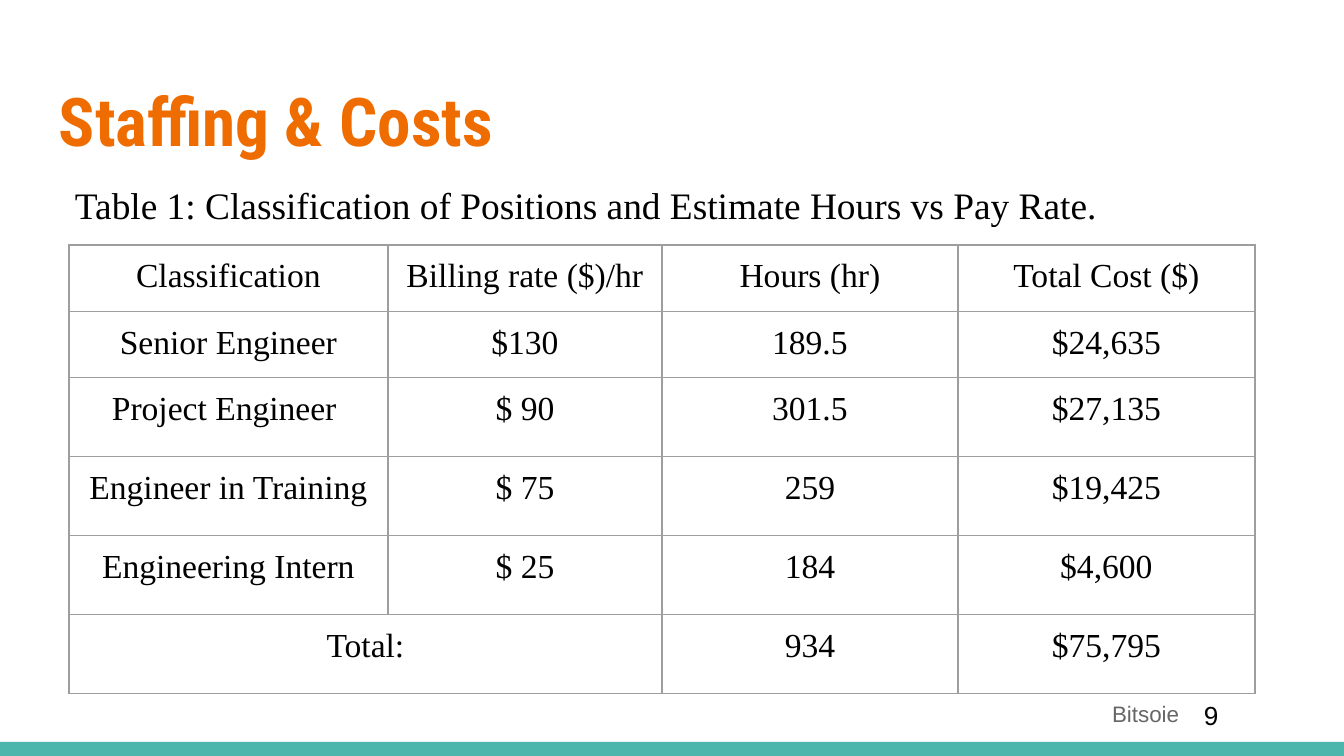
"""Build the staffing and costs slide."""
import pptx
import pptx.dml.color
import pptx.enum.shapes
import pptx.enum.text
import pptx.oxml
import pptx.oxml.ns
import pptx.util

RGB = pptx.dml.color.RGBColor
ALIGN = pptx.enum.text.PP_ALIGN
ANCHOR = pptx.enum.text.MSO_ANCHOR
TEAL = RGB(0x4D, 0xB6, 0xAC)
ORANGE = RGB(0xEF, 0x6C, 0x00)
BLACK = RGB(0x00, 0x00, 0x00)
GRAY = RGB(0x66, 0x66, 0x66)
RULE = RGB(0x9E, 0x9E, 0x9E)
SCALE = 914400 / 134.4
INSET = 13
SERIF = "Times New Roman"

TITLE = {"name": "Roboto Condensed", "size": 36, "bold": True, "color": ORANGE}
NOTE = {"name": SERIF, "size": 20, "color": BLACK}
BODY = {"name": SERIF, "size": 18, "color": BLACK}
PAGE = {"name": "Arial", "size": 14, "color": BLACK}
TEAM = {"name": "Arial", "size": 12, "color": GRAY}

COLS = [319, 274, 296, 297]
HIGH = [51, 51, 79, 79, 79, 79]
ROWS = [
    ["Classification", "Billing rate ($)/hr", "Hours (hr)", "Total Cost ($)"],
    ["Senior Engineer", "$130", "189.5", "$24,635"],
    ["Project Engineer ", "$ 90", "301.5", "$27,135"],
    ["Engineer in Training", "$ 75", "259", "$19,425"],
    ["Engineering Intern", "$ 25", "184", "$4,600"],
    ["Total:", "", "934", "$75,795"],
]


def px(num):
    """Turn pixels into EMU."""
    return pptx.util.Emu(round(num * SCALE))


def style(font, form):
    """Set font attributes from a dict of format values."""
    for key, val in form.items():
        if key == "color":
            font.color.rgb = val
        else:
            setattr(font, key, pptx.util.Pt(val) if key == "size" else val)


def pad(item):
    """Give a text frame or a cell equal margins."""
    for side in ("left", "top", "right", "bottom"):
        setattr(item, "margin_" + side, px(INSET))


def write(para, text, form):
    """Add one formatted run to a paragraph."""
    run = para.add_run()
    run.text = text
    style(run.font, form)


def label(slide, area, text, form, anchor=ANCHOR.TOP):
    """Add a text box."""
    frame = slide.shapes.add_textbox(*map(px, area)).text_frame
    frame.word_wrap = True
    frame.vertical_anchor = anchor
    pad(frame)
    write(frame.paragraphs[0], text, form)


def bar(slide, area, color):
    """Add a plain filled rectangle."""
    kind = pptx.enum.shapes.MSO_SHAPE.RECTANGLE
    shape = slide.shapes.add_shape(kind, *map(px, area))
    shape.shadow.inherit = False
    shape.fill.solid()
    shape.fill.fore_color.rgb = color
    shape.line.fill.background()


def border(cell):
    """Draw thin lines on all four sides of a cell."""
    props = cell._tc.get_or_add_tcPr()
    space = pptx.oxml.ns.nsdecls("a")
    width = pptx.util.Pt(0.75)
    for spot, side in enumerate("LRTB"):
        line = pptx.oxml.parse_xml(
            f'<a:ln{side} {space} w="{width}"><a:solidFill>'
            f'<a:srgbClr val="{RULE}"/></a:solidFill></a:ln{side}>')
        props.insert(spot, line)


def grid(slide, left, top):
    """Add the table of rates, hours and costs."""
    area = (left, top, sum(COLS), sum(HIGH))
    table = slide.shapes.add_table(
        len(ROWS), len(COLS), *map(px, area)).table
    table.first_row = table.horz_banding = False
    for col, width in zip(table.columns, COLS):
        col.width = px(width)
    for row, height in zip(table.rows, HIGH):
        row.height = px(height)
    last = len(ROWS) - 1
    table.cell(last, 0).merge(table.cell(last, 1))
    for row, texts in zip(table.rows, ROWS):
        for cell, text in zip(row.cells, texts):
            cell.fill.background()
            pad(cell)
            border(cell)
            if text:
                para = cell.text_frame.paragraphs[0]
                para.alignment = ALIGN.CENTER
                write(para, text, BODY)


def main():
    """Build and save the slide."""
    deck = pptx.Presentation()
    deck.slide_width, deck.slide_height = px(1344), px(756)
    slide = deck.slides.add_slide(deck.slide_layouts[6])
    bar(slide, (0, 742, 1344, 14), TEAL)
    label(slide, (46, 66, 1252, 103), "Staffing & Costs", TITLE)
    grid(slide, 69, 245)
    label(slide, (62, 169, 1175, 55),
          "Table 1: Classification of Positions and Estimate Hours vs Pay Rate.",
          NOTE)
    label(slide, (1191, 686, 134, 58), "9", PAGE, ANCHOR.MIDDLE)
    label(slide, (1099, 687, 128, 32), "Bitsoie", TEAM)
    deck.save("out.pptx")


if __name__ == "__main__":
    main()
